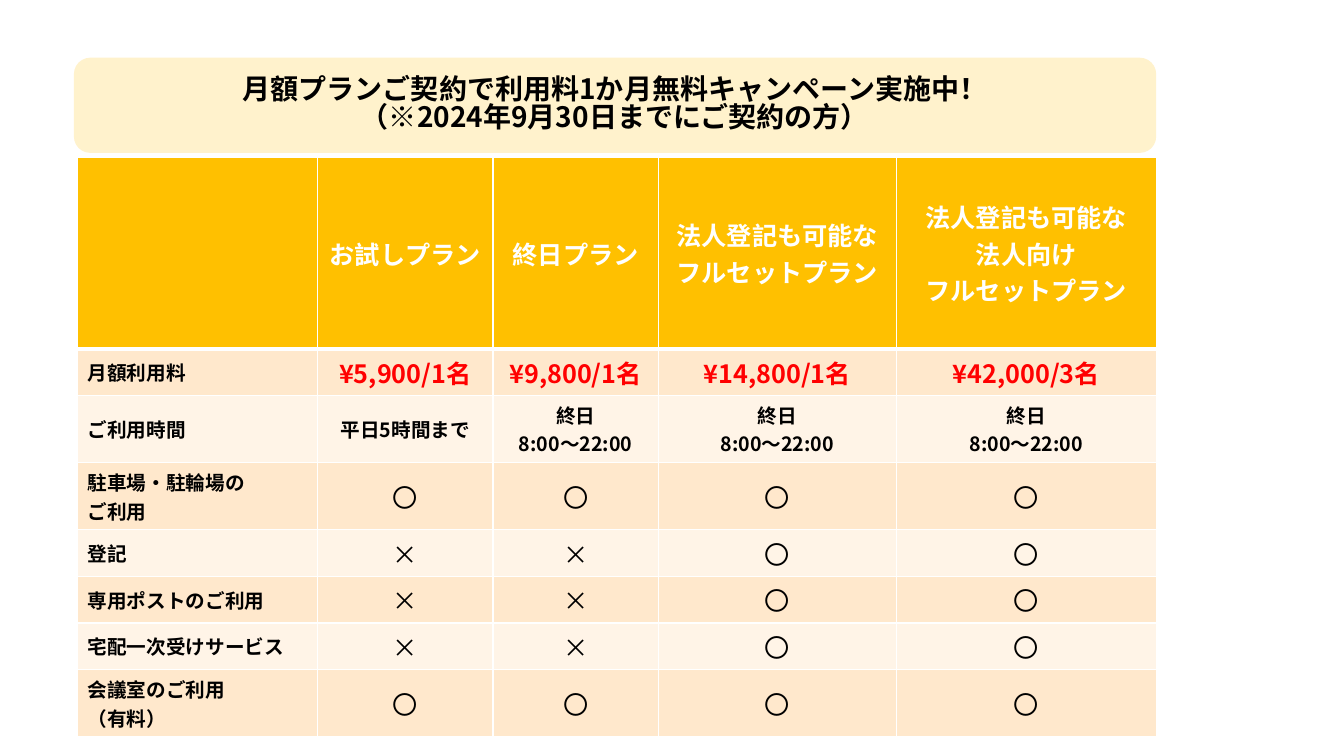
from lxml import etree
from pptx import Presentation, util as u
from pptx.dml.color import RGBColor
from pptx.enum import shapes, text
from pptx.oxml.ns import qn

FONT = "Noto Sans CJK JP"
WHITE, BLACK, RED = "FFFFFF", "000000", "FF0000"
AMBER, CREAM = "FFC000", "FFF2CC"
BANDS = ["FFE8CC", "FFF4E7"]

HOURS = "終日\n8:00～22:00"
YES, NO = "〇", "×"
PLANS = [
    ["", "お試しプラン", "終日プラン", "法人登記も可能な\nフルセットプラン",
     "法人登記も可能な\n法人向け\nフルセットプラン"],
    ["月額利用料", "¥5,900/1名", "¥9,800/1名", "¥14,800/1名", "¥42,000/3名"],
    ["ご利用時間", "平日5時間まで", HOURS, HOURS, HOURS],
    ["駐車場・駐輪場の\nご利用", YES, YES, YES, YES],
    ["登記", NO, NO, YES, YES],
    ["専用ポストのご利用", NO, NO, YES, YES],
    ["宅配一次受けサービス", NO, NO, YES, YES],
    ["会議室のご利用\n（有料）", YES, YES, YES, YES],
]
PLAN_WIDTHS = [23.8, 17.4, 16.4, 23.6, 25.8]
HEADER_HEIGHT, LOW, HIGH = 19, 4.6, 6.65
ROW_HEIGHTS = [HEADER_HEIGHT, LOW, HIGH, HIGH, LOW, LOW, LOW, HIGH]


def colour(value):
    return RGBColor.from_string(value)


def grid(count):
    """Length of a number of grid columns or rows, each a tenth of an inch."""
    return u.Inches(count / 10)


class PlanSlide:
    def __init__(self, deck):
        self.page = deck.slides.add_slide(deck.slide_layouts[6])

    def put_text(self, frame, words, size, ink, bold=True, centred=True, spacing=None):
        frame.word_wrap = True
        frame.vertical_anchor = text.MSO_ANCHOR.MIDDLE
        frame.text = words
        for para in frame.paragraphs:
            para.alignment = text.PP_ALIGN.CENTER if centred else text.PP_ALIGN.LEFT
            if spacing:
                para.line_spacing = spacing
            font = para.font
            font.size, font.bold, font.name = u.Pt(size), bold, FONT
            font.color.rgb = colour(ink)
            defaults = para._p.pPr.find(qn("a:defRPr"))
            etree.SubElement(defaults, qn("a:ea"), typeface=FONT)

    def banner(self, left, top, width, height, words):
        box = self.page.shapes.add_shape(
            shapes.MSO_SHAPE.ROUNDED_RECTANGLE, *map(grid, (left, top, width, height)))
        box.shadow.inherit = False
        box.fill.solid()
        box.fill.fore_color.rgb = colour(CREAM)
        box.line.color.rgb = colour(CREAM)
        box.line.width = u.Pt(1)
        self.put_text(box.text_frame, words, 20, BLACK, spacing=0.84)

    def borders(self, cell, **widths):
        """Draw white cell borders; widths in points, keyed L, R, T, B."""
        properties = cell._tc.get_or_add_tcPr()
        for side, width in widths.items():
            line = etree.SubElement(properties, qn(f"a:ln{side}"), w=str(u.Pt(width)))
            fill = etree.SubElement(line, qn("a:solidFill"))
            etree.SubElement(fill, qn("a:srgbClr"), val=WHITE)

    def cell(self, cell, words, row, column):
        header = row == 0
        self.borders(cell, L=1, R=1, T=3 if row == 1 else 1, B=3 if header else 1)
        cell.fill.solid()
        cell.fill.fore_color.rgb = colour(AMBER if header else BANDS[(row - 1) % 2])
        cell.vertical_anchor = text.MSO_ANCHOR.MIDDLE
        size, ink = 14, BLACK
        if header:
            size, ink = 18, WHITE
        elif row == 1 and column:
            size, ink = 18, RED
        elif words in (YES, NO):
            size = 18
        self.put_text(cell.text_frame, words, size, ink,
                      bold=words not in (YES, NO), centred=column > 0)

    def table(self, left, top, widths, heights, rows):
        table = self.page.shapes.add_table(
            len(rows), len(widths), grid(left), grid(top),
            grid(sum(widths)), grid(sum(heights))).table
        for column, width in zip(table.columns, widths):
            column.width = grid(width)
        for row, height in zip(table.rows, heights):
            row.height = grid(height)
        for r, row in enumerate(rows):
            for c, words in enumerate(row):
                self.cell(table.cell(r, c), words, r, c)


def main():
    deck = Presentation()
    deck.slide_width, deck.slide_height = u.Inches(13.33), u.Inches(7.5)
    slide = PlanSlide(deck)
    slide.table(7.7, 15.6, PLAN_WIDTHS, ROW_HEIGHTS, PLANS)
    slide.banner(7.4, 5.8, 107.2, 9.3,
                 "月額プランご契約で利用料1か月無料キャンペーン実施中！\n"
                 "（※2024年9月30日までにご契約の方）")
    deck.save("out.pptx")


if __name__ == "__main__":
    main()
